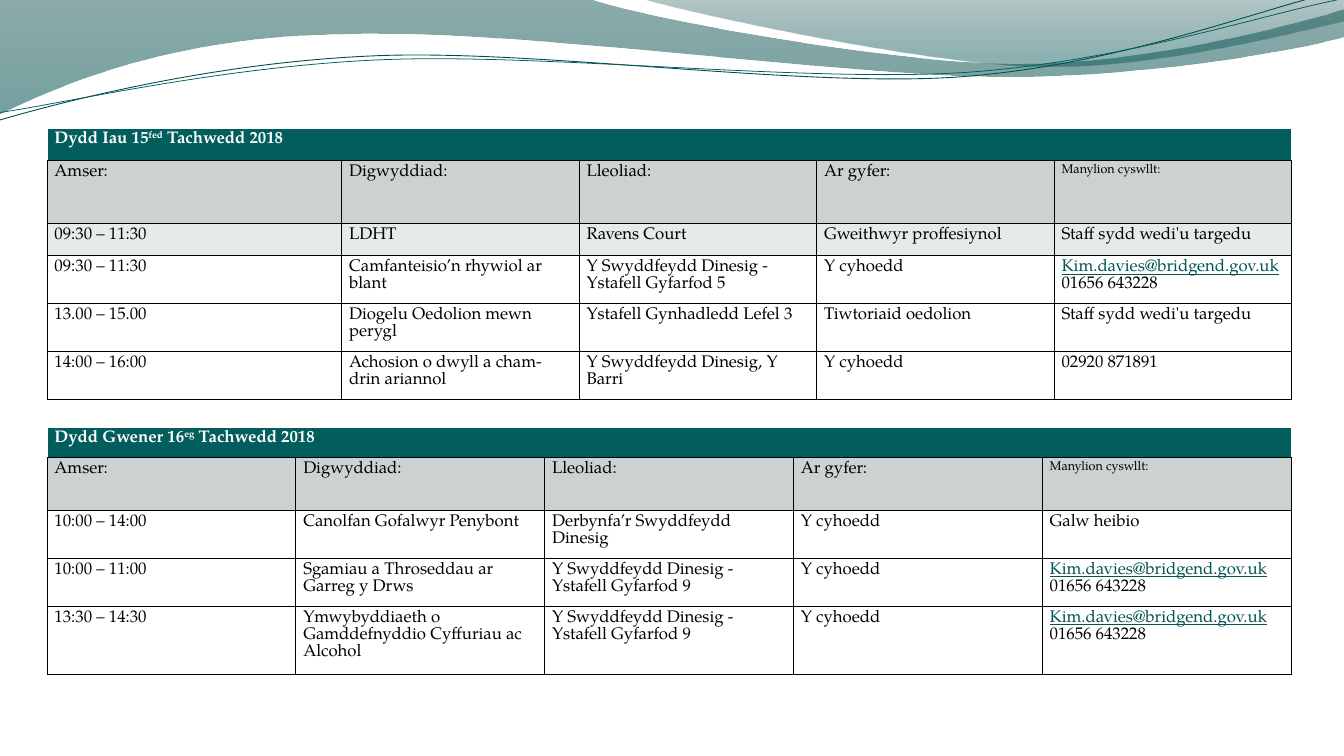
"""Build a slide with two event timetables under a waved header band."""
import math

import lxml.etree
import pptx
import pptx.dml.color
import pptx.oxml.ns
import pptx.util

RGBColor = pptx.dml.color.RGBColor
Cm = pptx.util.Cm
Pt = pptx.util.Pt
qn = pptx.oxml.ns.qn

BLACK = RGBColor(0x00, 0x00, 0x00)
WHITE = RGBColor(0xFF, 0xFF, 0xFF)
TEAL = RGBColor(0x02, 0x5E, 0x5C)
DARK_TEAL = RGBColor(0x03, 0x4C, 0x4A)
EMAIL_TEAL = RGBColor(0x03, 0x56, 0x54)
HEADER_GREY = RGBColor(0xCC, 0xD2, 0xD2)
ROW_GREY = RGBColor(0xE7, 0xEA, 0xEA)
WAVE_TOP = RGBColor(0x00, 0x47, 0x45)
WAVE_BOTTOM = RGBColor(0x00, 0x51, 0x4F)
CREST_TOP = RGBColor(0x00, 0x42, 0x40)
CREST_BOTTOM = RGBColor(0x00, 0x55, 0x53)
FONT = "TeX Gyre Pagella"


def add_outline(slide, frame, start, segments, closed, tilt=0):
    left, top, width, height = frame
    center_x, center_y = left + width / 2, top + height / 2
    cosine, sine = math.cos(math.radians(tilt)), math.sin(math.radians(tilt))

    builder = slide.shapes.build_freeform(Cm(start[0]), Cm(start[1]))
    builder.add_line_segments([(Cm(s[-1][0]), Cm(s[-1][1])) for s in segments], close=closed)
    shape = builder.convert_to_shape()
    shape.shadow.inherit = False
    shape.left, shape.top, shape.width, shape.height = map(Cm, frame)
    shape.rotation = -tilt

    outline = next(shape.element.iter(qn("a:path")))
    outline.set("w", str(Cm(width)))
    outline.set("h", str(Cm(height)))
    for command, points in zip(list(outline), [(start,), *segments]):
        if len(points) == 3:
            command.tag = qn("a:cubicBezTo")
        for point in list(command):
            command.remove(point)
        for x, y in points:
            dx, dy = x - center_x, y - center_y
            local_x = dx * cosine - dy * sine + width / 2
            local_y = dx * sine + dy * cosine + height / 2
            lxml.etree.SubElement(command, qn("a:pt"), x=str(Cm(local_x)), y=str(Cm(local_y)))
    return shape


def set_borders(cell, colors):
    properties = cell._tc.get_or_add_tcPr()
    for side, color in zip("LRTB", colors):
        line = lxml.etree.SubElement(properties, qn(f"a:ln{side}"), w=str(Pt(1)))
        fill = lxml.etree.SubElement(line, qn("a:solidFill"))
        lxml.etree.SubElement(fill, qn("a:srgbClr"), val=str(color))


presentation = pptx.Presentation()
presentation.slide_width = Cm(45.16)
presentation.slide_height = Cm(25.4)
slide = presentation.slides.add_slide(presentation.slide_layouts[6])

waves = [
    ((-0.05, -0.03, 45.24, 3.86), (0, -0.03), [
        ((19.89, -0.03),),
        ((21.49, 0.56), (29.97, 2.13), (34.24, 2.13)),
        ((38.53, 2.13), (43.28, 0.86), (45.16, 0.3)),
        ((45.21, 1.22),),
        ((44.4, 1.47), (39.27, 2.57), (33.68, 2.57)),
        ((28.09, 2.54), (17.25, 0.94), (11.61, 1.14)),
        ((5.77, 1.19), (2.06, 2.82), (-0.05, 3.84)),
        ((0, -0.03),),
    ], [(0, WAVE_TOP, 45), (1, WAVE_BOTTOM, 55)]),
    ((21.64, -0.03, 23.52, 2.36), (21.64, -0.03), [
        ((22.99, 0.38), (30.78, 2.08), (34.72, 2.21)),
        ((38.63, 2.34), (43.41, 1.09), (45.16, 0.71)),
        ((45.16, 0),),
        ((21.64, -0.03),),
    ], [(0, CREST_TOP, 30), (0.8, CREST_BOTTOM, 45)]),
]
for frame, start, segments, stops in waves:
    wave = add_outline(slide, frame, start, segments, True)
    wave.line.fill.background()
    wave.fill.gradient()
    wave.fill.gradient_angle = 270
    for stop, (position, color, _) in zip(wave.fill.gradient_stops, stops):
        stop.position = position
        stop.color.rgb = color
    for element, (_, _, opacity) in zip(wave.element.spPr.iter(qn("a:srgbClr")), stops):
        lxml.etree.SubElement(element, qn("a:alpha"), val=str(opacity * 1000))

strands = [
    ((-0.1, 0.76, 45.24, 2.41), (-0.03, 4.04), [
        ((2.16, 3.4), (7.14, 2.11), (12.5, 1.88)),
        ((17.86, 1.63), (26.75, 2.95), (32.16, 2.59)),
        ((37.59, 2.21), (42.39, 0.28), (45.09, -0.33)),
    ], DARK_TEAL, 0.85),
    ((-0.08, 1.02, 45.31, 1.96), (0, 3.78), [
        ((2.13, 3.48), (7.39, 2.24), (12.8, 2.01)),
        ((18.19, 1.78), (26.95, 2.77), (32.36, 2.44)),
        ((37.74, 2.08), (42.49, 0.46), (45.16, -0.05)),
    ], TEAL, 0.75),
]
for frame, start, segments, color, width in strands:
    strand = add_outline(slide, frame, start, segments, False, tilt=2.7)
    strand.fill.background()
    strand.line.color.rgb = color
    strand.line.width = Pt(width)

HEADINGS = ("Amser:", "Digwyddiad:", "Lleoliad:", "Ar gyfer:", "Manylion cyswllt:")
CONTACT = "Kim.davies@bridgend.gov.uk\n01656 643228"
TARGETED = "Staff sydd wedi'u targedu"
PUBLIC = "Y cyhoedd"
timetables = [
    (4.32, [9.9] + [7.98] * 4, [1.08, 2.11, 1.08, 1.61, 1.61, 1.61],
     ("Dydd Iau 15", "fed", " Tachwedd 2018"), [
        ("09:30 – 11:30", "LDHT", "Ravens Court", "Gweithwyr proffesiynol", TARGETED),
        ("09:30 – 11:30", "Camfanteisio’n rhywiol ar blant",
         "Y Swyddfeydd Dinesig - Ystafell Gyfarfod 5", PUBLIC, CONTACT),
        ("13.00 – 15.00", "Diogelu Oedolion mewn perygl",
         "Ystafell Gynhadledd Lefel 3", "Tiwtoriaid oedolion", TARGETED),
        ("14:00 – 16:00", "Achosion o dwyll a cham-drin ariannol",
         "Y Swyddfeydd Dinesig, Y Barri", PUBLIC, "02920 871891"),
    ], {1: HEADER_GREY, 2: ROW_GREY}),
    (14.37, [8.36] * 5, [1, 1.78, 1.61, 1.61, 2.28],
     ("Dydd Gwener 16", "eg", " Tachwedd 2018"), [
        ("10:00 – 14:00", "Canolfan Gofalwyr Penybont",
         "Derbynfa’r Swyddfeydd Dinesig", PUBLIC, "Galw heibio"),
        ("10:00 – 11:00", "Sgamiau a Throseddau ar Garreg y Drws",
         "Y Swyddfeydd Dinesig - Ystafell Gyfarfod 9", PUBLIC, CONTACT),
        ("13:30 – 14:30", "Ymwybyddiaeth o Gamddefnyddio Cyffuriau ac Alcohol",
         "Y Swyddfeydd Dinesig - Ystafell Gyfarfod 9", PUBLIC, CONTACT),
    ], {1: HEADER_GREY}),
]
for top, widths, heights, title, events, row_fills in timetables:
    table = slide.shapes.add_table(
        len(heights), len(widths), Cm(1.58), Cm(top), Cm(sum(widths)), Cm(sum(heights))).table
    for column, width in zip(table.columns, widths):
        column.width = Cm(width)
    for row, height in zip(table.rows, heights):
        row.height = Cm(height)

    for cell in table.rows[0].cells:
        set_borders(cell, (WHITE, WHITE, WHITE, BLACK))
        cell.fill.solid()
        cell.fill.fore_color.rgb = TEAL
    title_cell = table.cell(0, 0)
    title_cell.merge(table.cell(0, len(widths) - 1))
    title_cell.margin_left = Cm(0.25)
    title_cell.margin_top = Cm(0.08)
    title_cell.margin_bottom = 0
    paragraph = title_cell.text_frame.paragraphs[0]
    paragraph.line_spacing = Pt(16.2)
    for index, text in enumerate(title):
        run = paragraph.add_run()
        run.text = text
        run.font.name = FONT
        run.font.size = Pt(16)
        run.font.bold = True
        run.font.color.rgb = WHITE
        if index == 1:
            run.font._element.set("baseline", "30000")

    for row_index, texts in enumerate([HEADINGS, *events], start=1):
        for column_index, text in enumerate(texts):
            cell = table.cell(row_index, column_index)
            set_borders(cell, [BLACK] * 4)
            if row_index in row_fills:
                cell.fill.solid()
                cell.fill.fore_color.rgb = row_fills[row_index]
            else:
                cell.fill.background()
            cell.margin_left = cell.margin_right = Cm(0.25)
            cell.margin_top = Cm(0.12)
            cell.margin_bottom = 0
            size = 12 if text == HEADINGS[-1] else 16
            for line_index, line in enumerate(text.split("\n")):
                text_frame = cell.text_frame
                paragraph = text_frame.add_paragraph() if line_index else text_frame.paragraphs[0]
                paragraph.line_spacing = Pt(size + 0.2)
                run = paragraph.add_run()
                run.text = line
                run.font.name = FONT
                run.font.size = Pt(size)
                run.font.bold = False
                run.font.underline = "@" in line
                run.font.color.rgb = EMAIL_TEAL if "@" in line else BLACK

presentation.save("out.pptx")
